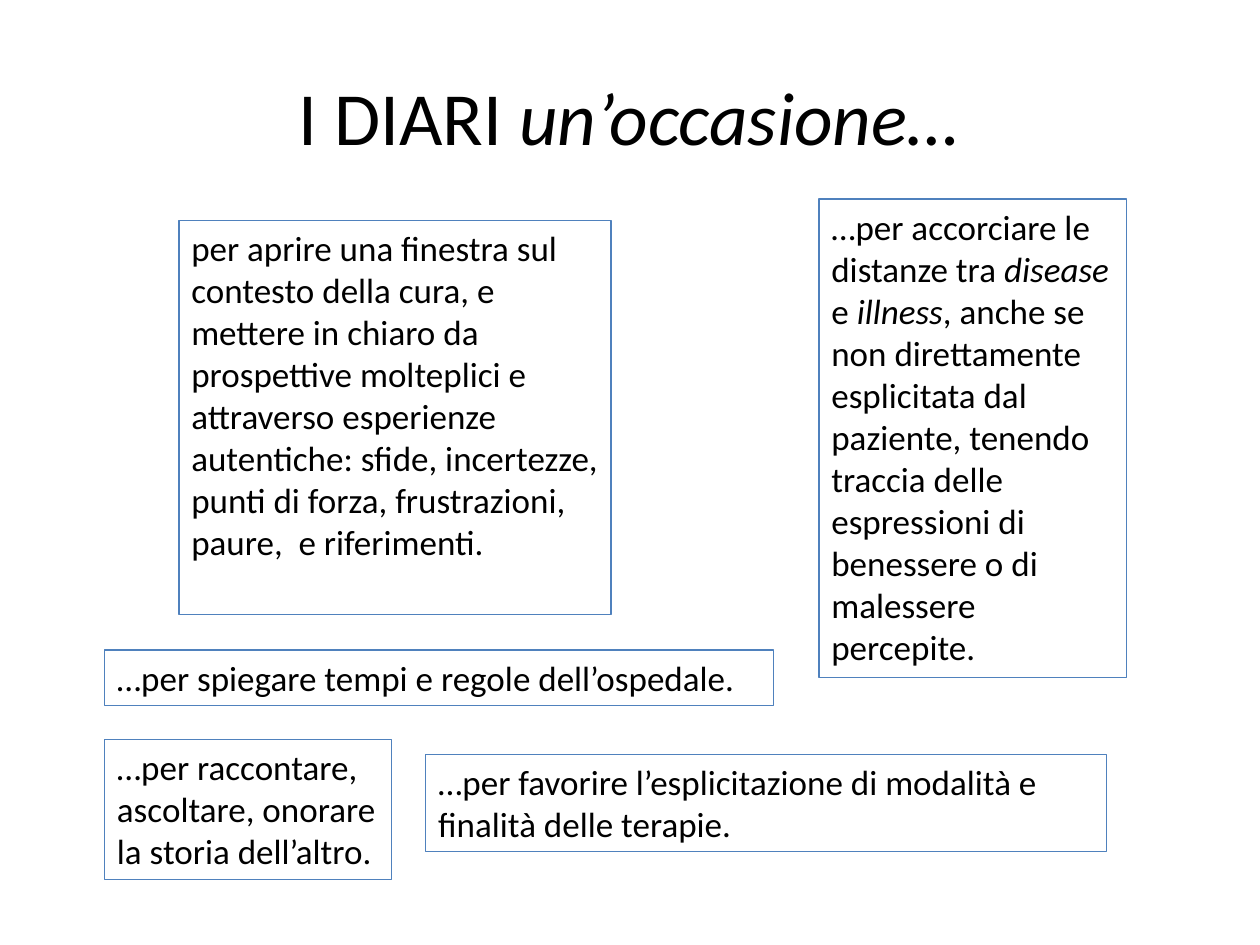
from dataclasses import dataclass

import pptx
import pptx.dml.color
import pptx.enum.text
import pptx.util

Inches = pptx.util.Inches
Align = pptx.enum.text.PP_ALIGN
Anchor = pptx.enum.text.MSO_ANCHOR


@dataclass(frozen=True)
class Theme:
    font: str = "Calibri"
    text: str = "000000"
    border: str = "4F81BD"
    border_width: float = 0.75
    title_size: float = 42.9
    body_size: float = 20


@dataclass(frozen=True)
class Run:
    text: str
    italic: bool = False


@dataclass(frozen=True)
class Box:
    left: float
    top: float
    width: float
    height: float
    runs: tuple[Run, ...]


THEME = Theme()
LEFT_MARGIN = 0.83

TITLE = Box(0.49, 0.29, 9, 1.25, (Run("I DIARI "), Run("un’occasione…", italic=True)))

REASONS = (
    Box(1.42, 1.75, 3.43, 3.13, (
        Run("per aprire una finestra sul contesto della cura, e mettere in chiaro da "
            "prospettive molteplici e attraverso esperienze autentiche: sfide, incertezze, "
            "punti di forza, frustrazioni,  paure,  e riferimenti."),
    )),
    Box(LEFT_MARGIN, 5.16, 5.31, 0.44, (
        Run("…per spiegare tempi e regole dell’ospedale."),
    )),
    Box(6.5, 1.58, 2.44, 3.8, (
        Run("…per accorciare le distanze tra "),
        Run("disease", italic=True),
        Run(" e "),
        Run("illness", italic=True),
        Run(", anche se non direttamente esplicitata dal paziente, tenendo traccia delle "
            "espressioni di benessere o di malessere percepite."),
    )),
    Box(LEFT_MARGIN, 5.87, 2.28, 1.11, (
        Run("…per raccontare, ascoltare, onorare la storia dell’altro."),
    )),
    Box(3.38, 5.99, 5.4, 0.77, (
        Run("…per favorire l’esplicitazione di modalità e finalità delle terapie."),
    )),
)


def color(value: str) -> pptx.dml.color.RGBColor:
    return pptx.dml.color.RGBColor.from_string(value)


def add_text(slide, box: Box, *, size: float, align=Align.LEFT,
             anchor=Anchor.TOP, border: str | None = None):
    shape = slide.shapes.add_textbox(
        Inches(box.left), Inches(box.top), Inches(box.width), Inches(box.height))
    if border:
        shape.line.color.rgb = color(border)
        shape.line.width = pptx.util.Pt(THEME.border_width)
    frame = shape.text_frame
    frame.word_wrap = True
    frame.vertical_anchor = anchor
    paragraph = frame.paragraphs[0]
    paragraph.alignment = align
    for part in box.runs:
        run = paragraph.add_run()
        run.text = part.text
        run.font.name = THEME.font
        run.font.size = pptx.util.Pt(size)
        run.font.italic = part.italic
        run.font.color.rgb = color(THEME.text)
    return shape


def main() -> None:
    presentation = pptx.Presentation()
    presentation.slide_width = Inches(10)
    presentation.slide_height = Inches(7.5)
    slide = presentation.slides.add_slide(presentation.slide_layouts[6])
    for reason in REASONS:
        add_text(slide, reason, size=THEME.body_size, border=THEME.border)
    add_text(slide, TITLE, size=THEME.title_size, align=Align.CENTER, anchor=Anchor.MIDDLE)
    presentation.save("out.pptx")


if __name__ == "__main__":
    main()
